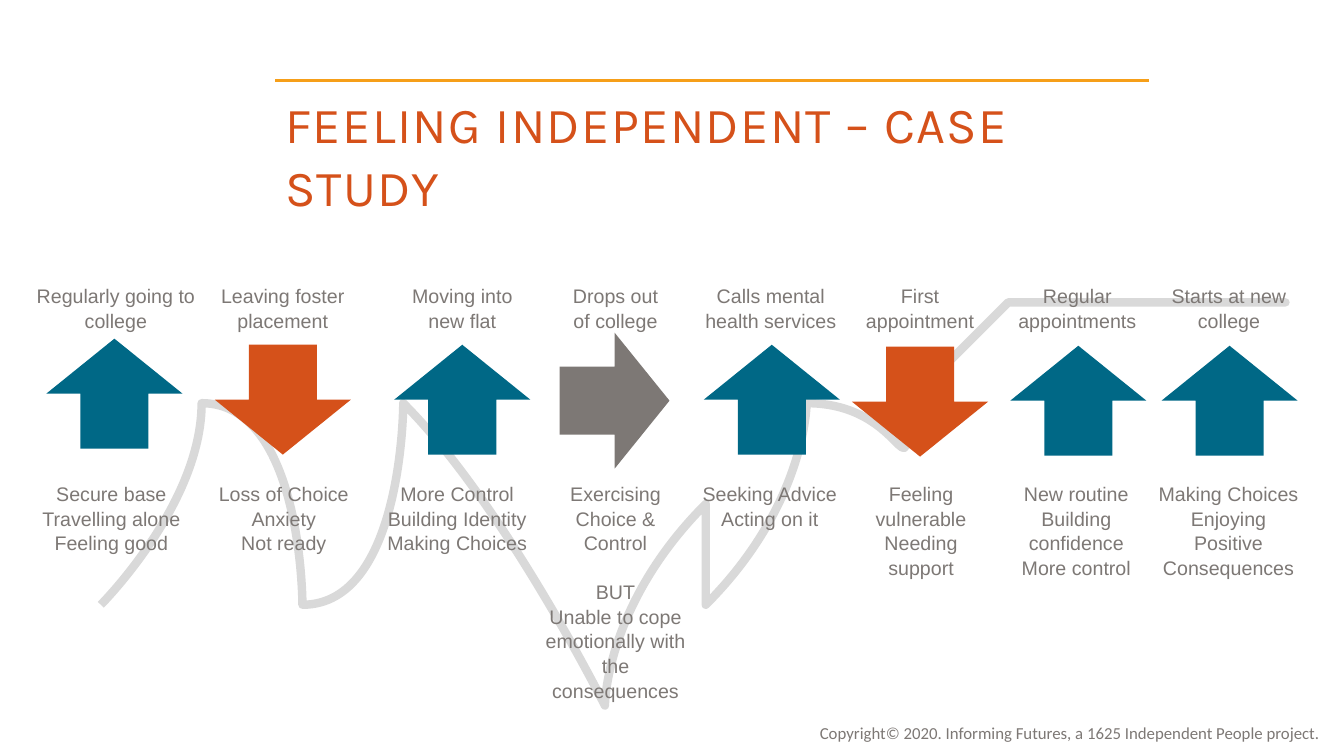
from lxml import etree
from pptx import Presentation
from pptx.dml.color import RGBColor
from pptx.enum import shapes, text
from pptx.oxml import ns
from pptx.util import Inches, Pt

COLORS = {"orange": "D5511A", "gold": "F69F19", "teal": "006886",
          "grey": "7D7875", "pale": "D9D9D9"}
ARROW_COLORS = {0: "teal", 90: "grey", 180: "orange"}
LINE_SPACING = 1.05
BLANK_LINE = 17

# event, left, width | arrow left, top, rotation | effects, left
STAGES = [
    (["Regularly going to college"], 0.22, 1.86, 0.46, 3.36, 0,
     ["Secure base", "Travelling alone", "Feeling good"], 0.3),
    (["Leaving foster placement"], 1.76, 2.09, 2.13, 3.42, 180,
     ["Loss of Choice", "Anxiety", "Not ready"], 2.01),
    (["Moving into new flat"], 3.84, 1.49, 3.91, 3.42, 0,
     ["More Control", "Building Identity", "Making Choices"], 3.73),
    (["Drops out", "of college"], 5.06, 2.09, 5.42, 3.43, 90,
     ["Exercising Choice & Control", "BUT",
      "Unable to cope emotionally with the consequences"], 5.3),
    (["Calls mental health services"], 6.85, 1.59, 6.98, 3.42, 0,
     ["Seeking Advice", "Acting on it"], 6.83),
    (["First appointment"], 8.33, 1.59, 8.45, 3.44, 180,
     ["Feeling vulnerable", "Needing support"], 8.33),
    (["Regular appointments"], 9.79, 1.79, 10.02, 3.43, 0,
     ["New routine", "Building confidence", "More control"], 9.87),
    (["Starts at new college"], 11.31, 1.76, 11.52, 3.43, 0,
     ["Making Choices", "Enjoying Positive Consequences"], 11.38),
]

JOURNEY_START = (0.62, 6.37)
JOURNEY_CURVES = [
    (1.16, 5.5), (1.71, 4.64), (2.12, 4.5),
    (2.54, 4.36), (2.73, 5.57), (3.12, 5.56),
    (3.51, 5.54), (4, 4.15), (4.46, 4.39),
    (4.92, 4.63), (5.52, 6.83), (5.89, 7),
    (6.27, 7.17), (6.5, 5.64), (6.72, 5.41),
    (6.95, 5.18), (6.96, 5.86), (7.24, 5.63),
    (7.51, 5.4), (8.09, 4.25), (8.38, 4.05),
    (8.68, 3.86), (8.76, 4.59), (9, 4.44),
    (9.23, 4.29), (9.53, 3.41), (9.8, 3.17),
    (10.07, 2.92), (10.38, 3.06), (10.61, 2.97),
    (10.84, 2.89), (10.88, 2.7), (11.17, 2.65),
    (11.46, 2.59), (12.14, 2.65), (12.35, 2.65),
    (12.56, 2.65), (12.51, 2.64), (12.45, 2.64),
]


def color(name):
    """Return the named colour."""
    return RGBColor.from_string(COLORS[name])


def add_text(s, lines, left, top, width, height, size=14, font="Arial",
             fill="grey", align=text.PP_ALIGN.CENTER, spacing=LINE_SPACING,
             tracking=0):
    """Add a wrapped text box with one paragraph per line."""
    tf = s.shapes.add_textbox(Inches(left), Inches(top),
                              Inches(width), Inches(height)).text_frame
    tf.word_wrap = True
    tf.auto_size = text.MSO_AUTO_SIZE.SHAPE_TO_FIT_TEXT
    for i, line in enumerate(lines):
        p = tf.paragraphs[0] if i == 0 else tf.add_paragraph()
        p.alignment = align
        p.line_spacing = spacing
        if line == "BUT":
            p.space_before = Pt(BLANK_LINE)
        r = p.add_run()
        r.text = line
        r.font.size = Pt(size)
        r.font.name = font
        r.font.color.rgb = color(fill)
        if tracking:
            r.font._element.set("spc", str(tracking))


def add_rule(s, left, top, right):
    """Add the horizontal line above the title."""
    rule = s.shapes.add_connector(shapes.MSO_CONNECTOR.STRAIGHT, Inches(left),
                                  Inches(top), Inches(right), Inches(top))
    rule.line.color.rgb = color("gold")
    rule.line.width = Pt(2.25)
    etree.SubElement(rule._element.spPr, ns.qn("a:effectLst"))


def add_journey(s):
    """Add the winding line, joining each three points into one curve."""
    builder = s.shapes.build_freeform(*JOURNEY_START, scale=Inches(1))
    builder.add_line_segments(JOURNEY_CURVES, close=False)
    sp = builder.convert_to_shape()
    sp.shadow.inherit = False
    sp.fill.background()
    sp.line.color.rgb = color("pale")
    sp.line.width = Pt(6)
    outline = sp._element.find(".//" + ns.qn("a:path"))
    segments = outline.findall(ns.qn("a:lnTo"))
    for i in range(0, len(segments), 3):
        curve = etree.SubElement(outline, ns.qn("a:cubicBezTo"))
        for segment in segments[i:i + 3]:
            curve.append(segment[0])
            outline.remove(segment)


def add_arrow(s, left, top, rotation):
    """Add a block arrow coloured by its direction."""
    sp = s.shapes.add_shape(shapes.MSO_SHAPE.UP_ARROW, Inches(left),
                            Inches(top), Inches(1.35), Inches(1.09))
    sp.rotation = rotation
    sp.shadow.inherit = False
    sp.fill.solid()
    sp.fill.fore_color.rgb = color(ARROW_COLORS[rotation])
    sp.line.fill.background()


def main():
    """Build the slide and save it."""
    prs = Presentation()
    prs.slide_width, prs.slide_height = Inches(13.33), Inches(7.5)
    s = prs.slides.add_slide(prs.slide_layouts[6])
    add_text(s, ["Copyright© 2020.\u00a0Informing Futures, a 1625 Independent People project."
                 .replace("\u00a0", " ")], 6.94, 7.12, 6.25, 0.3, 12, "Calibri",
             align=text.PP_ALIGN.RIGHT, spacing=1.0)
    add_text(s, ["FEELING INDEPENDENT – CASE STUDY"], 2.73, 0.84, 7.52, 1.32,
             36, "Karla", "orange", text.PP_ALIGN.LEFT, tracking=100)
    add_rule(s, 2.73, 0.8, 11.4)
    add_journey(s)
    for event, left, width, arrow_left, arrow_top, rotation, effects, effects_left in STAGES:
        add_text(s, event, left, 2.76, width, 0.57)
        add_arrow(s, arrow_left, arrow_top, rotation)
        add_text(s, effects, effects_left, 4.72, 1.61, 0.81)
    prs.save("out.pptx")


if __name__ == "__main__":
    main()
